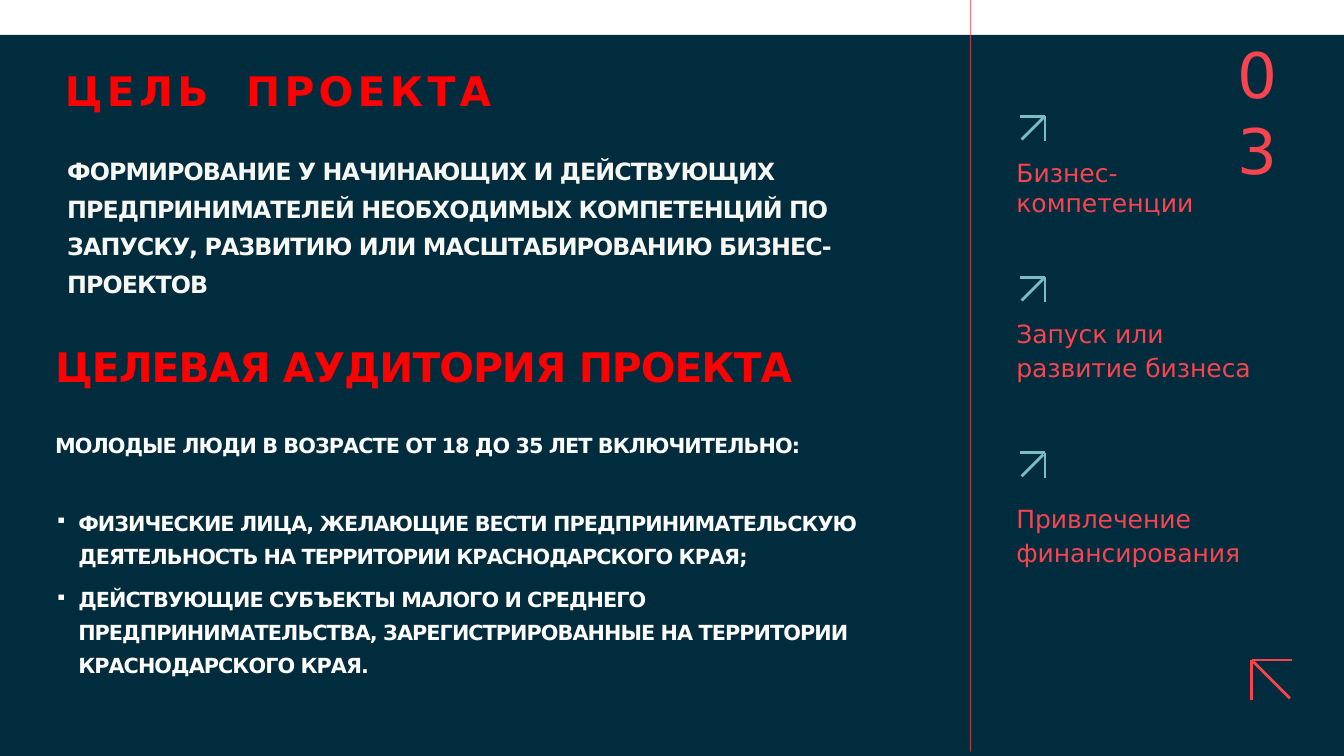
from lxml.etree import SubElement as Sub
from pptx import Presentation
from pptx.dml.color import RGBColor
from pptx.enum.shapes import MSO_CONNECTOR as Conn, MSO_SHAPE as Shape
from pptx.enum.text import MSO_ANCHOR as Anchor, MSO_AUTO_SIZE as Auto, PP_ALIGN as Align
from pptx.oxml.ns import qn
from pptx.util import Pt

WIDTH, HEIGHT = 1583.3, 890.6
BAND_TOP = 41
MAIN_WIDTH = 975.6
SIDE_LEFT, SIDE_ARROW_RIGHT = 1196.6, 1231

NAVY, RED, CORAL, TEAL = "012C3D", "FF0000", "F7444F", "78BDC4"
WHITE, IVORY = "FFFFFF", "F7F8F3"

HEADING = dict(size=48, color=RED, bold=True)
BODY = dict(bold=True, spacing=-1.1, line=1.32)
AUDIENCE = dict(BODY, size=24.5, color=WHITE)
BULLET = dict(AUDIENCE, after=12, indent=28, hang=27.4, bullet="▪")
BENEFIT = dict(size=29.5, color=CORAL)
LOOSE = dict(BENEFIT, spacing=-0.1, line=1.14)


def rgb(code):
    return RGBColor.from_string(code)


def hundredths(points):
    return str(round(points * 100))


class Deck:
    font = "DejaVu Sans"
    stroke = 3.3

    def __init__(self):
        self.prs = Presentation()
        self.prs.slide_width, self.prs.slide_height = Pt(WIDTH), Pt(HEIGHT)
        self.s = self.prs.slides.add_slide(self.prs.slide_layouts[5])

    def rect(self, x, y, w, h, fill, opacity=100):
        sp = self.s.shapes.add_shape(Shape.RECTANGLE, Pt(x), Pt(y), Pt(w), Pt(h))
        sp.shadow.inherit = False
        sp.fill.solid()
        sp.fill.fore_color.rgb = rgb(fill)
        sp.line.fill.background()
        if opacity < 100:
            fill_color = sp.element.spPr.find(qn("a:solidFill")).find(qn("a:srgbClr"))
            Sub(fill_color, qn("a:alpha")).set("val", str(opacity * 1000))

    def frame(self, sp, top, right=0):
        tf = sp.text_frame
        tf.word_wrap = True
        tf.auto_size = Auto.SHAPE_TO_FIT_TEXT
        tf.vertical_anchor = Anchor.TOP
        tf.margin_left = tf.margin_bottom = 0
        tf.margin_top, tf.margin_right = Pt(top), Pt(right)
        return tf

    def text(self, x, y, w, h, top=0.7):
        return self.frame(self.s.shapes.add_textbox(Pt(x), Pt(y), Pt(w), Pt(h)), top)

    def title(self, x, y, w, h, text, **style):
        sp = self.s.shapes.title
        sp.left, sp.top, sp.width, sp.height = Pt(x), Pt(y), Pt(w), Pt(h)
        sp.element.getparent().append(sp.element)
        self.para(self.frame(sp, top=1.4, right=10), text, **style)

    def para(self, tf, *texts, size, color, bold=False, spacing=0, line=1.0,
             before=0, after=0, indent=0.7, hang=0, bullet=None):
        p = tf.add_paragraph() if tf.text else tf.paragraphs[0]
        p.alignment = Align.LEFT
        p.line_spacing = line
        p.space_before, p.space_after = Pt(before), Pt(after)
        pPr = p._p.get_or_add_pPr()
        pPr.set("marL", str(Pt(indent)))
        pPr.set("indent", str(Pt(-hang)))
        if bullet:
            Sub(pPr, qn("a:buSzPct")).set("val", "80000")
            Sub(pPr, qn("a:buChar")).set("char", bullet)
        p.font.name, p.font.size, p.font.bold = self.font, Pt(size), bold
        p.font.color.rgb = rgb(color)
        pPr.find(qn("a:defRPr")).set("spc", hundredths(spacing))
        for text in texts:
            p.add_run().text = text
        return p

    def track(self, run, spacing):
        run._r.get_or_add_rPr().set("spc", hundredths(spacing))

    def arrow(self, x, y, size, side, color):
        group = self.s.shapes.add_group_shape()
        inner, outer = 2, size - 2
        shaft, top_edge, side_edge = (
            (inner, inner, outer, outer), (0, 0, size, 0), (0, 0, 0, size))
        for x1, y1, x2, y2 in (side_edge, top_edge, shaft):
            c = group.shapes.add_connector(
                Conn.STRAIGHT, Pt(x + side * x1), Pt(y + y1), Pt(x + side * x2), Pt(y + y2))
            c.line.color.rgb = rgb(color)
            c.line.width = Pt(self.stroke)
            Sub(c.element.spPr, qn("a:effectLst"))


def add_audience(d):
    tf = d.text(64.2, 383, MAIN_WIDTH, 744.5)
    d.para(tf, "ЦЕЛЕВАЯ АУДИТОРИЯ ПРОЕКТА", **dict(BODY, **HEADING))
    d.para(tf, "МОЛОДЫЕ ЛЮДИ В ВОЗРАСТЕ ОТ 18 ДО 35 ЛЕТ ВКЛЮЧИТЕЛЬНО:", before=40.3, **AUDIENCE)
    d.para(tf, "ФИЗИЧЕСКИЕ ЛИЦА, ЖЕЛАЮЩИЕ ВЕСТИ ПРЕДПРИНИМАТЕЛЬСКУЮ ДЕЯТЕЛЬНОСТЬ "
               "НА ТЕРРИТОРИИ КРАСНОДАРСКОГО КРАЯ;", before=53, **BULLET)
    d.para(tf, "ДЕЙСТВУЮЩИЕ СУБЪЕКТЫ МАЛОГО И СРЕДНЕГО ПРЕДПРИНИМАТЕЛЬСТВА, "
               "ЗАРЕГИСТРИРОВАННЫЕ НА ТЕРРИТОРИИ КРАСНОДАРСКОГО КРАЯ.", before=0.9, **BULLET)


def add_goal(d):
    tf = d.text(75.6, 74.9, MAIN_WIDTH, 274.3, top=2.2)
    heading = d.para(tf, "ЦЕЛЬ", " ", "ПРОЕКТА", spacing=5.2, **HEADING)
    d.track(heading.runs[1], 22.3)
    d.para(tf, "ФОРМИРОВАНИЕ У НАЧИНАЮЩИХ И ДЕЙСТВУЮЩИХ ПРЕДПРИНИМАТЕЛЕЙ "
               "НЕОБХОДИМЫХ КОМПЕТЕНЦИЙ ПО ЗАПУСКУ, РАЗВИТИЮ ИЛИ "
               "МАСШТАБИРОВАНИЮ БИЗНЕС-ПРОЕКТОВ",
           size=28, color=IVORY, before=39, indent=3.6, **BODY)


def add_benefits(d):
    benefits = [
        ("Бизнес-компетенции", 136.8, (168.5, 235.4, 88.6, 16.6), BENEFIT),
        ("Запуск или развитие бизнеса", 326.5, (369, 302.4, 78.5), LOOSE),
        ("Привлечение финансирования", 533.5, (587.5, 332.6, 78.5), LOOSE),
    ]
    for label, arrow_top, box, style in benefits:
        d.para(d.text(SIDE_LEFT, *box), label, **style)
        d.arrow(SIDE_ARROW_RIGHT, arrow_top, 29.5, -1, TEAL)


def main():
    d = Deck()
    d.rect(0, BAND_TOP, WIDTH, HEIGHT, NAVY)
    add_audience(d)
    add_goal(d)
    d.title(1448.6, BAND_TOP, 100, 93.6, "03", size=74, color=CORAL, spacing=-5, indent=9.4)
    d.arrow(1474.6, 777.6, 47, 1, CORAL)
    add_benefits(d)
    d.rect(1142.6, 0, 1.4, 885.6, CORAL, opacity=70)
    d.prs.save("out.pptx")


if __name__ == "__main__":
    main()
